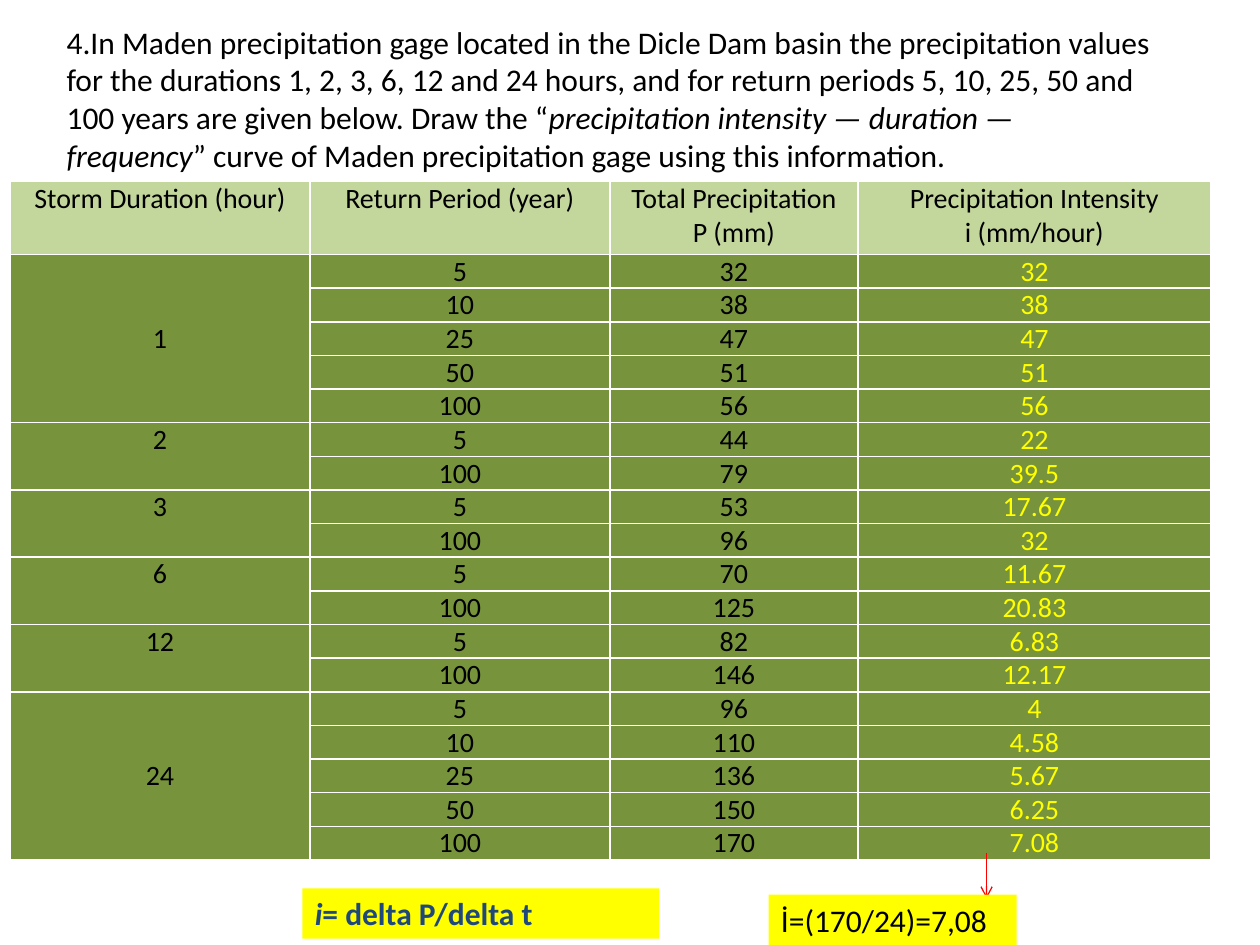
from dataclasses import dataclass
from typing import Any, NamedTuple

from lxml.etree import SubElement
from pptx import Presentation
from pptx.dml.color import RGBColor
from pptx.enum.shapes import MSO_CONNECTOR as Connector, MSO_SHAPE as Preset
from pptx.enum.text import MSO_ANCHOR as Anchor, MSO_AUTO_SIZE as AutoSize, PP_ALIGN as Align
from pptx.oxml.ns import qn
from pptx.util import Inches, Pt

GRID_COLUMNS, GRID_ROWS = 100, 75
SLIDE_WIDTH, SLIDE_HEIGHT = Inches(10), Inches(7.5)
BLACK, WHITE, RED, YELLOW, NAVY = "000000", "FFFFFF", "FF0000", "FFFF00", "1F497D"
HEADER_GREEN, BODY_GREEN = "C3D69B", "77933C"


class Run(NamedTuple):
    """A stretch of text with its emphasis."""
    text: str
    italic: bool = False


@dataclass
class TextBlock:
    """A block of text placed in grid columns and rows."""
    left: float
    top: float
    width: float
    height: float
    runs: list[Run]
    color: str = BLACK
    bold: bool = False
    fill: str | None = None


class Storm(NamedTuple):
    """One duration with (return period, precipitation, intensity) readings."""
    duration: str
    readings: list[tuple[str, str, str]]


BLOCKS = [
    TextBlock(4.3, 1.3, 88.2, 13.1, [
        Run("4.In Maden precipitation gage located in the Dicle Dam basin the precipitation "
            "values for the durations 1, 2, 3, 6, 12 and 24 hours, and for return periods "
            "5, 10, 25, 50 and 100 years are given below. Draw the “"),
        Run("precipitation intensity — duration — frequency", italic=True),
        Run("” curve of Maden precipitation gage using this information."),
    ]),
    TextBlock(24, 70.5, 28.3, 4, [Run("i", italic=True), Run("= delta P/delta t")],
              NAVY, True, YELLOW),
    TextBlock(61, 71, 19.7, 4, [Run("İ=(170/24)=7,08")], fill=YELLOW),
]

HEADERS = ["Storm Duration (hour)", "Return Period (year)",
           "Total Precipitation\vP (mm)", "Precipitation Intensity\ni (mm/hour)"]
STORMS = [
    Storm("1", [("5", "32", "32"), ("10", "38", "38"), ("25", "47", "47"),
                ("50", "51", "51"), ("100", "56", "56")]),
    Storm("2", [("5", "44", "22"), ("100", "79", "39.5")]),
    Storm("3", [("5", "53", "17.67"), ("100", "96", "32")]),
    Storm("6", [("5", "70", "11.67"), ("100", "125", "20.83")]),
    Storm("12", [("5", "82", "6.83"), ("100", "146", "12.17")]),
    Storm("24", [("5", "96", "4"), ("10", "110", "4.58"), ("25", "136", "5.67"),
                 ("50", "150", "6.25"), ("100", "170", "7.08")]),
]
TABLE_LEFT, TABLE_TOP, TABLE_HEIGHT, HEADER_HEIGHT = 0.8, 14.4, 53.8, 5.8
COLUMN_WIDTHS = [23.8, 23.8, 19.7, 28]
CELL_FORMAT = {"margin_left": Inches(0.07), "margin_right": Inches(0.07),
               "margin_top": 0, "margin_bottom": 0}
TEXT_FORMAT = {"word_wrap": True, "auto_size": AutoSize.SHAPE_TO_FIT_TEXT,
               "vertical_anchor": Anchor.TOP}


def across(columns: float) -> int:
    """Turn grid columns into a slide length."""
    return round(SLIDE_WIDTH * columns / GRID_COLUMNS)


def down(rows: float) -> int:
    """Turn grid rows into a slide length."""
    return round(SLIDE_HEIGHT * rows / GRID_ROWS)


def color_of(hex_color: str) -> RGBColor:
    """Read a colour from a hex string."""
    return RGBColor.from_string(hex_color)


def apply(target: Any, values: dict[str, Any]) -> None:
    """Set every attribute named in the format values."""
    for name, value in values.items():
        setattr(target, name, value)


def set_font(font: Any, size: float, color: str, **values: Any) -> None:
    """Give a font its face, size, colour and further values."""
    apply(font, {"name": "Calibri", "size": Pt(size), **values})
    font.color.rgb = color_of(color)


def paint(target: Any, color: str) -> None:
    """Fill a shape or cell with one colour."""
    target.fill.solid()
    target.fill.fore_color.rgb = color_of(color)


def draw_block(slide: Any, block: TextBlock) -> None:
    """Draw a text block, as a rectangle when it has a fill."""
    frame = across(block.left), down(block.top), across(block.width), down(block.height)
    if block.fill:
        shape = slide.shapes.add_shape(Preset.RECTANGLE, *frame)
        shape.shadow.inherit = False
        shape.line.fill.background()
        paint(shape, block.fill)
    else:
        shape = slide.shapes.add_textbox(*frame)
    apply(shape.text_frame, TEXT_FORMAT)
    paragraph = shape.text_frame.paragraphs[0]
    paragraph.alignment = Align.LEFT
    for part in block.runs:
        run = paragraph.add_run()
        run.text = part.text
        set_font(run.font, 18, block.color, bold=block.bold, italic=part.italic)


def add_borders(cell: Any) -> None:
    """Outline a cell in white."""
    properties = cell._tc.get_or_add_tcPr()
    for side in ("a:lnL", "a:lnR", "a:lnT", "a:lnB"):
        line = SubElement(properties, qn(side), w=str(Pt(1)))
        SubElement(SubElement(line, qn("a:solidFill")), qn("a:srgbClr"), val=WHITE)


def fill_cell(cell: Any, text: str, color: str) -> None:
    """Write centred text into a cell."""
    cell.text = text
    for paragraph in cell.text_frame.paragraphs:
        paragraph.alignment = Align.CENTER
        for run in paragraph.runs:
            set_font(run.font, 16, color)


def draw_table(slide: Any, storms: list[Storm]) -> None:
    """Draw the precipitation table with durations merged over their readings."""
    count = sum(len(storm.readings) for storm in storms)
    table = slide.shapes.add_table(
        count + 1, len(HEADERS), across(TABLE_LEFT), down(TABLE_TOP),
        across(sum(COLUMN_WIDTHS)), down(TABLE_HEIGHT)).table
    apply(table, {"first_row": False, "horz_banding": False})
    for column, width in zip(table.columns, COLUMN_WIDTHS):
        column.width = across(width)
    for index, row in enumerate(table.rows):
        row.height = down((TABLE_HEIGHT - HEADER_HEIGHT) / count if index else HEADER_HEIGHT)
        for cell in row.cells:
            apply(cell, CELL_FORMAT)
            add_borders(cell)
            paint(cell, BODY_GREEN if index else HEADER_GREEN)
    for index, header in enumerate(HEADERS):
        fill_cell(table.cell(0, index), header, BLACK)
    first = 1
    for storm in storms:
        size = len(storm.readings)
        duration = table.cell(first, 0)
        duration.merge(table.cell(first + size - 1, 0))
        fill_cell(duration, storm.duration, BLACK)
        duration.vertical_anchor = Anchor.MIDDLE if size > 2 else Anchor.TOP
        for row, reading in enumerate(storm.readings, first):
            for column, (text, color) in enumerate(zip(reading, (BLACK, BLACK, YELLOW)), 1):
                fill_cell(table.cell(row, column), text, color)
        first += size


def draw_arrow(slide: Any, column: float, start: float, end: float) -> None:
    """Draw a thin red arrow pointing down."""
    arrow = slide.shapes.add_connector(
        Connector.STRAIGHT, across(column), down(start), across(column), down(end))
    arrow.line.width = Pt(0.75)
    arrow.line.color.rgb = color_of(RED)
    SubElement(arrow.line._get_or_add_ln(), qn("a:tailEnd"), type="arrow")
    SubElement(arrow._element.spPr, qn("a:effectLst"))


def main() -> None:
    """Build and save the slide."""
    presentation = Presentation()
    apply(presentation, {"slide_width": SLIDE_WIDTH, "slide_height": SLIDE_HEIGHT})
    slide = presentation.slides.add_slide(presentation.slide_layouts[6])
    question, formula, example = BLOCKS
    draw_block(slide, question)
    draw_table(slide, STORMS)
    draw_block(slide, formula)
    draw_arrow(slide, 78.3, 67.7, 71.3)
    draw_block(slide, example)
    presentation.save("out.pptx")


if __name__ == "__main__":
    main()
